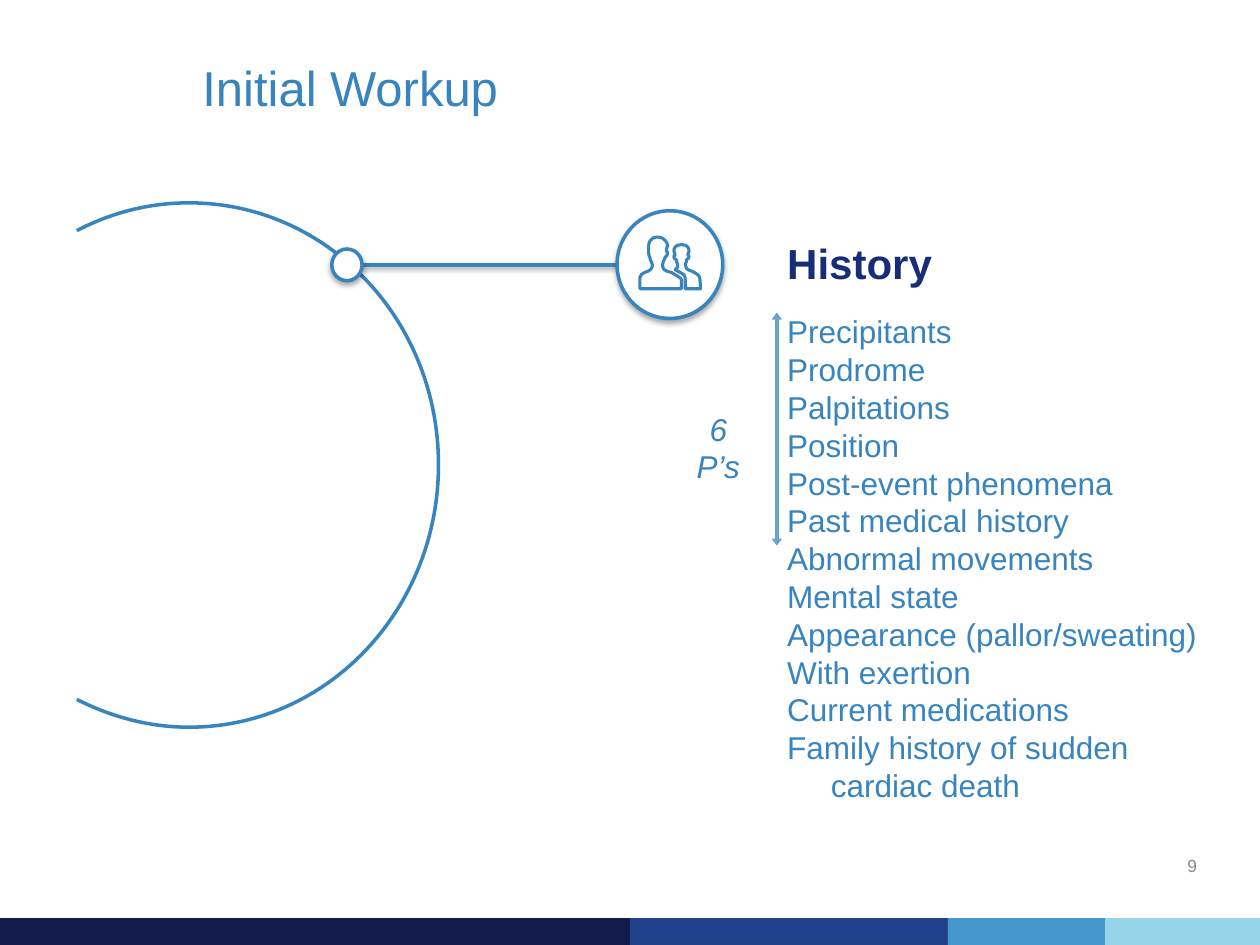
from lxml.etree import SubElement
from pptx import Presentation
from pptx.dml.color import RGBColor
from pptx.enum.shapes import MSO_CONNECTOR, MSO_SHAPE
from pptx.enum.text import MSO_ANCHOR, MSO_AUTO_SIZE, PP_ALIGN
from pptx.oxml.ns import qn
from pptx.util import Cm, Pt

BLUE = RGBColor(0x38, 0x84, 0xBF)
NAVY = RGBColor(0x17, 0x2E, 0x77)
ARROW_BLUE = RGBColor(0x6A, 0xA3, 0xCF)
GREY = RGBColor(0x88, 0x88, 0x88)
WHITE = RGBColor(0xFF, 0xFF, 0xFF)

# Content
TITLE = "Initial Workup"
HEADING = "History"
SIX_PS = ["Precipitants", "Prodrome", "Palpitations", "Position",
          "Post-event phenomena", "Past medical history"]
OTHER_POINTS = ["Abnormal movements", "Mental state",
                "Appearance (pallor/sweating)", "With exertion",
                "Current medications", "Family history of sudden",
                "cardiac death"]
SIX_PS_LABEL = "6 P’s"
PAGE_NUMBER = "9"

# Footer bands: width in cm and colour
BANDS = [(12.7, RGBColor(0x13, 0x1B, 0x4D)), (6.41, RGBColor(0x21, 0x42, 0x8A)),
         (3.17, RGBColor(0x45, 0x97, 0xCB)), (3.12, RGBColor(0x97, 0xD4, 0xE9))]
BAND_TOP, BAND_HEIGHT = 18.51, 0.54

# Outlines: a start point, then Bezier curves (two handles and an end point)
RING = ((1.55, 14.1), [
    (2.24, 14.45, 3, 14.66, 3.81, 14.66), (6.6, 14.66, 8.84, 12.29, 8.84, 9.37),
    (8.84, 6.45, 6.6, 4.09, 3.81, 4.09), (3, 4.09, 2.24, 4.29, 1.55, 4.65)])

# People icon on a grid 48 wide
ICON_LEFT, ICON_TOP, ICON_UNIT = 12.9, 4.78, 1.22 / 48
BACK_PERSON = ((48, 41), [
    (48, 41, 48, 32, 47, 31), (46, 30, 44, 28, 41, 27), (37, 26, 36, 24, 36, 22),
    (36, 20, 37, 21, 37, 18), (37, 17, 39, 18, 39, 15), (39, 14, 38, 14, 38, 14),
    (38, 14, 39, 12, 39, 11), (39, 9, 38, 6, 33, 6), (28, 6, 27, 9, 27, 11),
    (27, 12, 28, 14, 28, 14), (28, 14, 27, 14, 27, 15), (27, 18, 28, 17, 29, 18),
    (29, 21, 30, 20, 30, 22), (30, 23, 30, 25, 28, 26), (36, 30, 36, 30, 36, 34),
    (36, 41, 36, 41, 36, 41)])
FRONT_PERSON = ((25, 28), [
    (19, 27, 18, 25, 18, 22), (18, 19, 19, 20, 20, 16), (20, 15, 22, 16, 22, 12),
    (22, 11, 21, 11, 21, 11), (21, 11, 21, 8, 22, 7), (22, 5, 20, 0, 14, 0),
    (8, 0, 7, 5, 7, 7), (7, 8, 7, 11, 7, 11), (7, 11, 7, 11, 7, 12),
    (7, 16, 8, 15, 8, 16), (8, 20, 10, 19, 10, 22), (10, 25, 8, 27, 4, 28),
    (2, 29, 0, 30, 0, 32), (0, 41, 0, 41, 0, 41), (33, 41, 33, 41, 33, 41),
    (33, 41, 33, 36, 33, 34), (33, 32, 29, 31, 25, 28)])


def set_effects(part, shadow=None):
    """Replace the theme shadow by none, or by (opacity %, distance pt)."""
    effects = SubElement(part._element.spPr, qn("a:effectLst"))
    if shadow:
        opacity, distance = shadow
        outer = SubElement(effects, qn("a:outerShdw"), blurRad=str(Pt(3)),
                           dist=str(Pt(distance)), dir="5400000", rotWithShape="0")
        black = SubElement(outer, qn("a:srgbClr"), val="000000")
        SubElement(black, qn("a:alpha"), val=str(opacity * 1000))


def paint(part, fill=WHITE, line=BLUE, width=2, shadow=None):
    part.fill.solid()
    part.fill.fore_color.rgb = fill
    if line is None:
        part.line.fill.background()
    else:
        part.line.color.rgb = line
        part.line.width = Pt(width)
    set_effects(part, shadow)


def add_line(shapes, start, end, color, shadow=None):
    line = shapes.add_connector(MSO_CONNECTOR.STRAIGHT, *map(Cm, start + end))
    line.line.color.rgb = color
    line.line.width = Pt(2)
    set_effects(line, shadow)
    return line


def add_outline(shapes, contours, left=0, top=0, unit=1, close=False):
    """Build the outline from its end points, then bend each segment."""
    fine = 1000
    builder = shapes.build_freeform(*(v * fine for v in contours[0][0]),
                                    scale=Cm(unit) / fine)
    for index, (start, curves) in enumerate(contours):
        if index:
            builder.move_to(*(v * fine for v in start))
        builder.add_line_segments([(c[4] * fine, c[5] * fine) for c in curves],
                                  close=close)
    outline = builder.convert_to_shape(Cm(left), Cm(top))

    all_curves = [curve for _, curves in contours for curve in curves]
    min_x = min(curve[4] for curve in all_curves)
    min_y = min(curve[5] for curve in all_curves)
    segments = list(outline._element.iter(qn("a:lnTo")))
    for segment, curve in zip(segments, all_curves):
        segment.tag = qn("a:cubicBezTo")
        for index, (x, y) in enumerate([curve[:2], curve[2:4]]):
            handle = SubElement(segment, qn("a:pt"), x=str(round((x - min_x) * fine)),
                                y=str(round((y - min_y) * fine)))
            segment.insert(index, handle)
    return outline


def write(part, lines, size, color, align=PP_ALIGN.LEFT, inset=0.13,
          wrap=True, anchor=MSO_ANCHOR.TOP, **font_format):
    frame = part.text_frame
    frame.text = "\n".join(lines)
    frame_format = {"word_wrap": wrap, "vertical_anchor": anchor,
                    "auto_size": MSO_AUTO_SIZE.NONE}
    for side in ("left", "top", "right", "bottom"):
        frame_format["margin_" + side] = Cm(inset)
    for key, value in frame_format.items():
        setattr(frame, key, value)
    for paragraph in frame.paragraphs:
        paragraph.alignment = align
        paragraph.line_spacing = Pt(size * 1.2)
        for key, value in {"name": "Arial", "size": Pt(size), **font_format}.items():
            setattr(paragraph.font, key, value)
        paragraph.font.color.rgb = color
    return frame


def main():
    deck = Presentation()
    deck.slide_width, deck.slide_height = Cm(25.4), Cm(19.05)
    slide = deck.slides.add_slide(deck.slide_layouts[5])
    shapes = slide.shapes

    # Footer bands
    left = 0
    for width, color in BANDS:
        band = shapes.add_shape(MSO_SHAPE.RECTANGLE,
                                *map(Cm, (left, BAND_TOP, width, BAND_HEIGHT)))
        paint(band, color, line=None)
        left += width

    # Title and page number
    title = shapes.title
    place = {"left": 4.08, "top": 0.91, "width": 6.99, "height": 1.7}
    for key, value in place.items():
        setattr(title, key, Cm(value))
    title.fill.solid()
    title.fill.fore_color.rgb = WHITE
    write(title, [TITLE], 28, BLUE, inset=0, anchor=MSO_ANCHOR.MIDDLE)
    number = shapes.add_textbox(*map(Cm, (23.77, 17.25, 0.36, 0.38)))
    write(number, [PAGE_NUMBER], 10, GREY, PP_ALIGN.RIGHT, inset=0, wrap=False,
          anchor=MSO_ANCHOR.MIDDLE)

    # Ring with its branch to the badge
    add_line(shapes, (7.24, 5.34), (12.7, 5.34), BLUE, shadow=(38, 1.6))
    paint(add_outline(shapes, [RING]))
    for circle in [(6.69, 5.02, 0.61, 0.64), (12.44, 4.25, 2.13, 2.17)]:
        paint(shapes.add_shape(MSO_SHAPE.OVAL, *map(Cm, circle)), shadow=(35, 1.8))

    # History heading, icon and list
    heading = shapes.add_textbox(*map(Cm, (15.74, 4.65, 8.64, 1.24)))
    write(heading, [HEADING], 24, NAVY, bold=True)
    paint(add_outline(shapes, [BACK_PERSON, FRONT_PERSON], ICON_LEFT, ICON_TOP,
                      ICON_UNIT, close=True), width=1.75)
    points = shapes.add_textbox(*map(Cm, (15.74, 6.17, 8.64, 10.31)))
    frame = write(points, SIX_PS + OTHER_POINTS, 18, BLUE)
    frame.paragraphs[-1]._p.get_or_add_pPr().set("marL", str(Cm(0.88)))

    # Arrow beside the six Ps and its label
    arrow = add_line(shapes, (15.66, 11), (15.66, 6.3), ARROW_BLUE)
    for end in ("a:headEnd", "a:tailEnd"):
        SubElement(arrow.line._get_or_add_ln(), qn(end), type="triangle", len="sm")
    label = shapes.add_textbox(*map(Cm, (13.84, 8.13, 1.28, 1.8)))
    write(label, [SIX_PS_LABEL], 18, BLUE, PP_ALIGN.CENTER, italic=True)

    deck.save("out.pptx")


if __name__ == "__main__":
    main()
